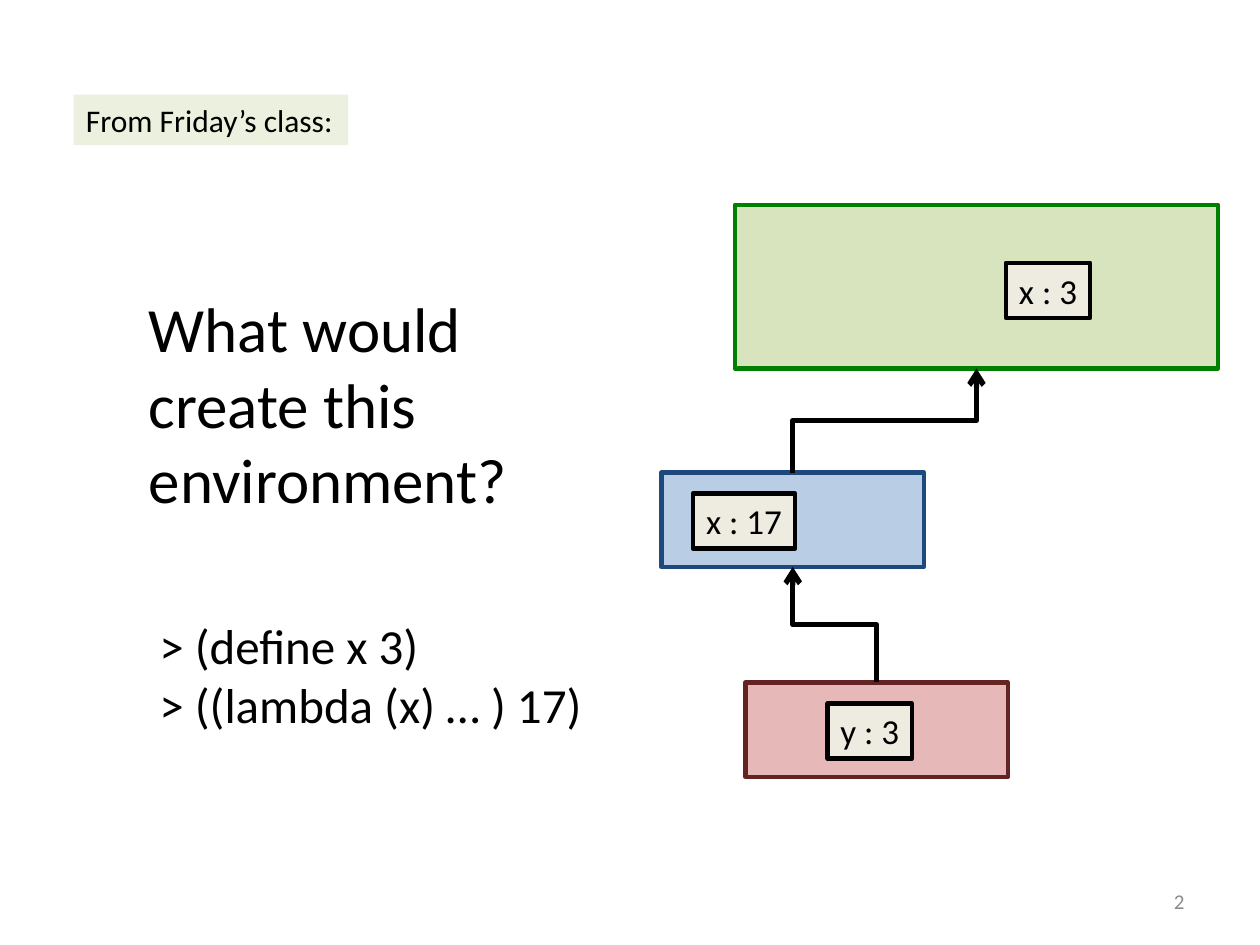
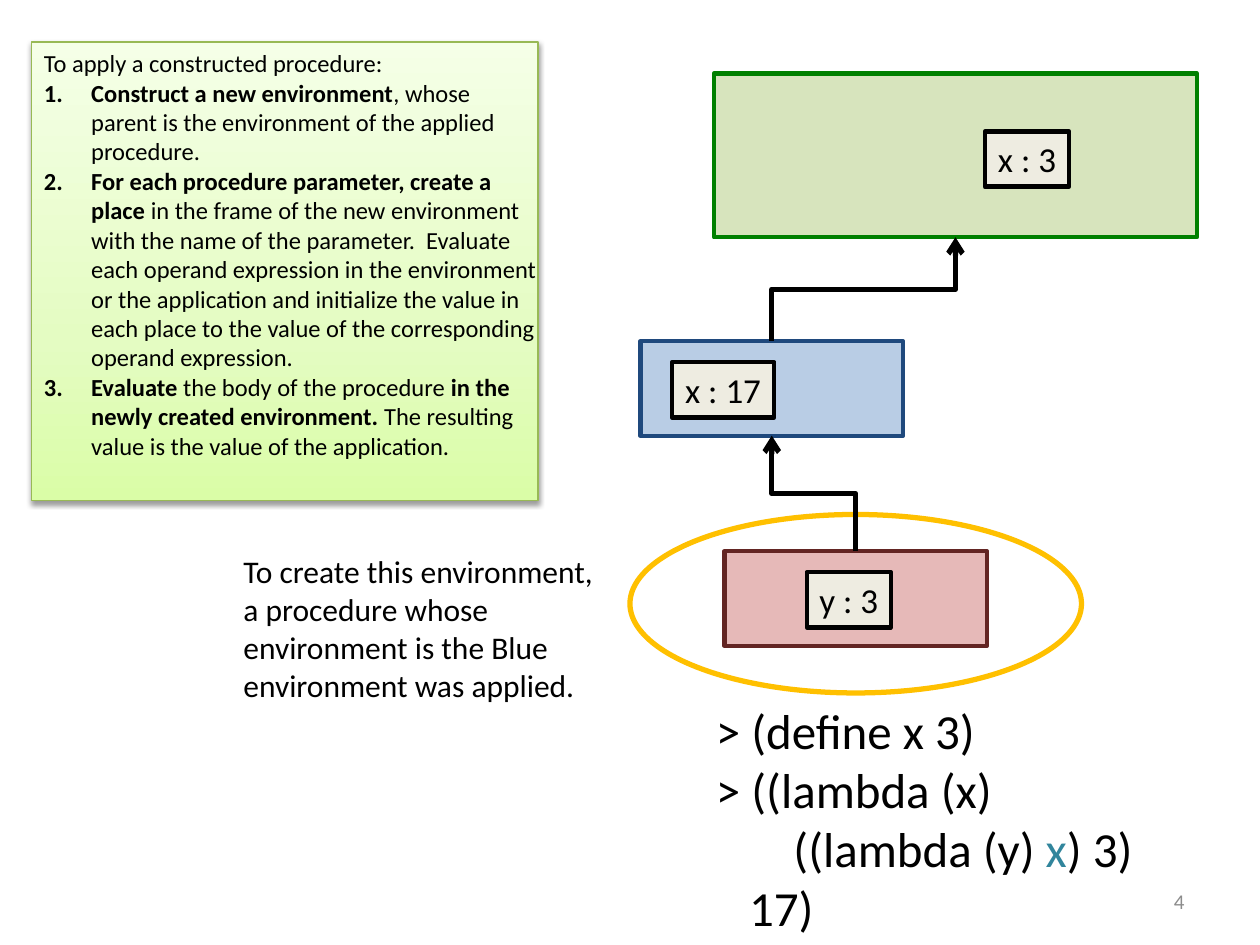
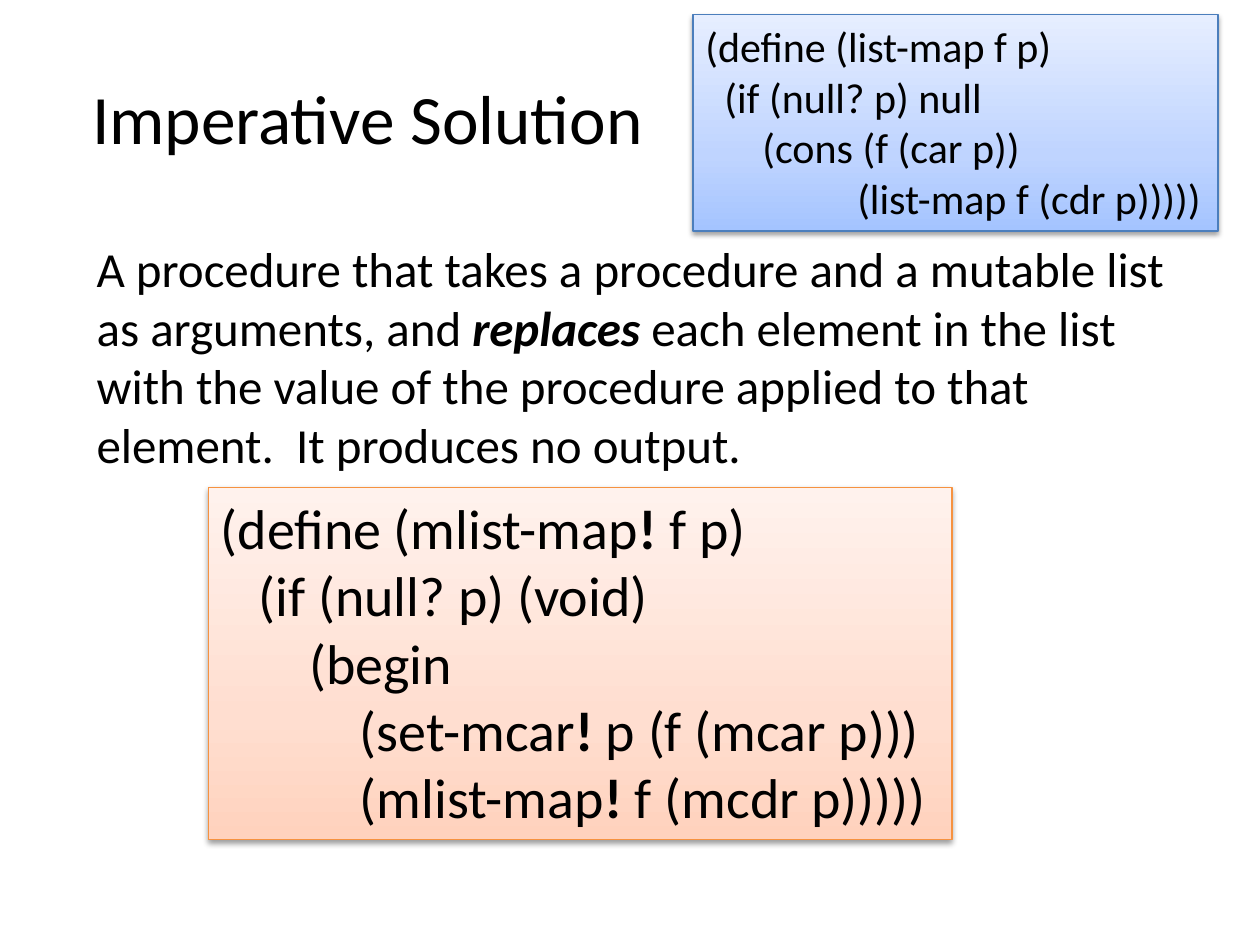
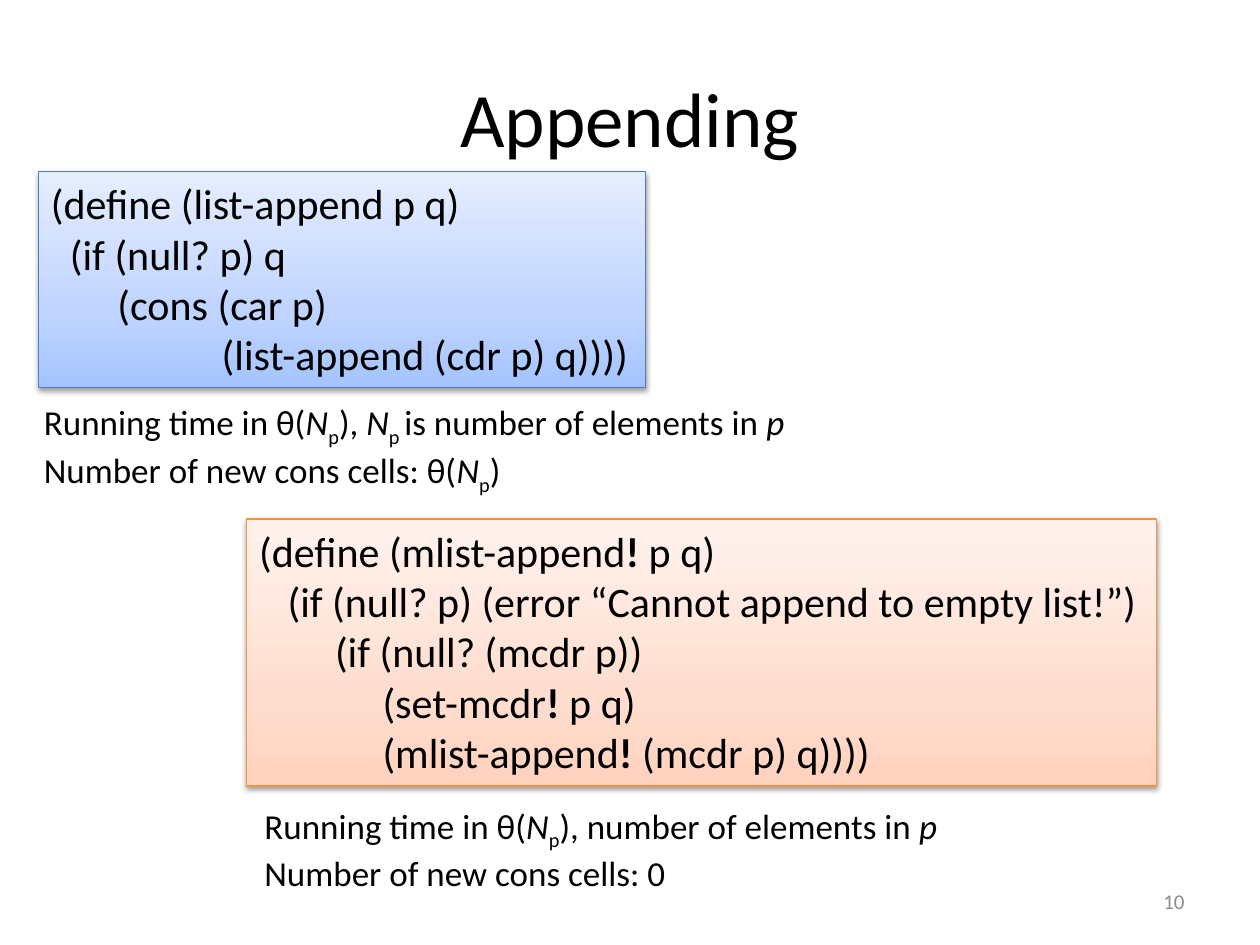
from dataclasses import dataclass

from lxml import etree
from pptx import Presentation
from pptx.dml.color import RGBColor
from pptx.enum import shapes, text
from pptx.oxml import ns
from pptx.util import Pt

FONT = "Calibri"
SPACE_WIDTH = 0.226
LIST_INDENT = 27
BLACK = "000000"
PALE_GREEN = "EBF1DE"
PLACE_FILL = "EEECE1"
GREY = "8C8C8C"
TEAL = "31859C"
AMBER = "FFC000"
GLOBAL_COLOURS = ("D7E4BD", "008000")
BLUE_COLOURS = ("B9CDE5", "1F497D")
RED_COLOURS = ("E6B9B8", "632523")
GREEN_PANEL = (("DAFDA7", "E4FCC2", "F5FFE7"), "98B955")
BLUE_PANEL = (("A4C4FF", "BFD4FF", "E6EEFF"), "4B7EBC")
ORANGE_PANEL = (("FFD2BD", "FFDED0", "FFF2ED"), "F69240")
BOLD = {"bold": True}
ITALIC = {"italic": True}
BANG = ("!", BOLD)
N_SUB_P = (("N", ITALIC), ("p", {"subscript": True}))


@dataclass
class Line:
    runs: tuple
    spaces: int = 0
    numbered: bool = False


def line(*runs, spaces=0, numbered=False):
    return Line(runs, spaces, numbered)


def rgb(value):
    return RGBColor.from_string(value)


def add_xml(parent, tag, **attributes):
    return etree.SubElement(parent, ns.qn(tag), attributes)


def add_run(paragraph, run, size, colour):
    words, style = (run, {}) if isinstance(run, str) else run
    part = paragraph.add_run()
    part.text = words
    part.font.name = FONT
    part.font.size = Pt(size)
    part.font.bold = style.get("bold", False)
    part.font.italic = style.get("italic", False)
    part.font.color.rgb = rgb(style.get("colour", colour))
    if style.get("subscript"):
        part._r.get_or_add_rPr().set("baseline", "-25000")


def write(frame, lines, size, colour=BLACK, align=text.PP_ALIGN.LEFT,
          anchor=text.MSO_ANCHOR.TOP, wrap=True):
    frame.word_wrap = wrap
    frame.vertical_anchor = anchor
    frame.auto_size = text.MSO_AUTO_SIZE.NONE
    for number, content in enumerate(lines):
        paragraph = frame.add_paragraph() if number else frame.paragraphs[0]
        paragraph.alignment = align
        properties = paragraph._p.get_or_add_pPr()
        if content.numbered:
            properties.set("marL", str(Pt(LIST_INDENT)))
            properties.set("indent", str(-Pt(LIST_INDENT)))
            add_xml(properties, "a:buFont", typeface="+mj-lt")
            add_xml(properties, "a:buAutoNum", type="arabicPeriod")
        elif content.spaces:
            margin = Pt(content.spaces * SPACE_WIDTH * size)
            properties.set("marL", str(margin))
            properties.set("indent", "0")
        for run in content.runs:
            add_run(paragraph, run, size, colour)


def add_text(slide, box, lines, size, **style):
    frame = slide.shapes.add_textbox(*map(Pt, box)).text_frame
    frame.margin_right = 0
    write(frame, lines, size, **style)


def add_block(slide, box, fill=None, outline=None, width=2.5,
              kind=shapes.MSO_SHAPE.RECTANGLE):
    block = slide.shapes.add_shape(kind, *map(Pt, box))
    block.shadow.inherit = False
    if fill:
        block.fill.solid()
        block.fill.fore_color.rgb = rgb(fill)
    else:
        block.fill.background()
    if outline:
        block.line.color.rgb = rgb(outline)
        block.line.width = Pt(width)
    else:
        block.line.fill.background()
    return block


def add_panel(slide, box, colours, lines, size):
    gradient, outline = colours
    panel = add_block(slide, box, outline=outline, width=0.75)
    panel.fill.gradient()
    panel.fill.gradient_angle = 90
    properties = panel._element.spPr
    stops = properties.find(".//" + ns.qn("a:gsLst"))
    for stop in list(stops):
        stops.remove(stop)
    for position, colour in zip((0, 35, 100), gradient):
        stop = add_xml(stops, "a:gs", pos=str(position * 1000))
        add_xml(stop, "a:srgbClr", val=colour)
    effects = properties.find(ns.qn("a:effectLst"))
    shadow = add_xml(effects, "a:outerShdw", blurRad=str(Pt(3.1)),
                     dist=str(Pt(1.6)), dir="5400000", rotWithShape="0")
    add_xml(add_xml(shadow, "a:srgbClr", val=BLACK), "a:alpha", val="38000")
    panel.text_frame.margin_right = 0
    write(panel.text_frame, lines, size)


def add_place(slide, box, binding):
    place = add_block(slide, box, PLACE_FILL, BLACK)
    write(place.text_frame, [line(binding)], 20,
          align=text.PP_ALIGN.CENTER, wrap=False)


def add_parent_arrow(slide, child, parent):
    start_x, start_y = child[0] + child[2] / 2, child[1]
    end_x, end_y = parent[0] + parent[2] / 2, parent[1] + parent[3]
    rise, run = start_y - end_y, abs(end_x - start_x)
    left = (start_x + end_x - rise) / 2
    top = (start_y + end_y - run) / 2
    arrow = slide.shapes.add_connector(
        shapes.MSO_CONNECTOR.ELBOW,
        *map(Pt, (left, top, left + rise, top + run)))
    arrow.line.color.rgb = rgb(BLACK)
    arrow.line.width = Pt(3)
    properties = arrow._element.spPr
    properties.xfrm.set("rot", "16200000")
    if end_x < start_x:
        properties.xfrm.set("flipV", "1")
    add_xml(arrow.line._get_or_add_ln(), "a:tailEnd", type="arrow")
    add_xml(properties, "a:effectLst")


def add_environments(slide, x, y):
    global_frame = (x, y, 276, 93.6)
    blue_frame = (x - 42, y + 153, 150, 54)
    red_frame = (x + 6, y + 273, 150, 54)
    for frame, colours in ((red_frame, RED_COLOURS),
                           (global_frame, GLOBAL_COLOURS),
                           (blue_frame, BLUE_COLOURS)):
        add_block(slide, frame, *colours)
    for dx, dy, width, binding in ((154.8, 33.2, 48.2, "x : 3"),
                                   (-24, 165, 58.5, "x : 17"),
                                   (53, 285, 48.2, "y : 3")):
        add_place(slide, (x + dx, y + dy, width, 31.5), binding)
    add_parent_arrow(slide, blue_frame, global_frame)
    add_parent_arrow(slide, red_frame, blue_frame)


def move(placeholder, box):
    placeholder.left, placeholder.top, placeholder.width, placeholder.height = map(Pt, box)


def add_title(slide, words, width, size):
    title = slide.shapes.title
    move(title, (36, 21.6, width, 90))
    write(title.text_frame, [line(words)], size,
          align=text.PP_ALIGN.CENTER, anchor=text.MSO_ANCHOR.MIDDLE)


def add_page_number(slide, number):
    frame = slide.shapes.add_textbox(*map(Pt, (516, 500.5, 168, 28.75))).text_frame
    write(frame, [line(str(number))], 12, colour=GREY,
          align=text.PP_ALIGN.RIGHT, anchor=text.MSO_ANCHOR.MIDDLE)


def build_question(slide):
    add_page_number(slide, 2)
    add_environments(slide, 420, 117)
    add_text(slide, (78, 162, 222, 138),
             [line("What would create this environment?")], 36)
    heading = add_block(slide, (42, 54, 157, 29), PALE_GREEN)
    heading.text_frame.margin_right = 0
    write(heading.text_frame, [line("From Friday’s class:")], 18)
    add_text(slide, (84, 348, 258.5, 75),
             [line("> (define x 3)"), line("> ((lambda (x) … ) 17)")], 28)


def build_application(slide):
    add_block(slide, (360, 294, 258, 102), outline=AMBER, width=3,
              kind=shapes.MSO_SHAPE.OVAL)
    add_page_number(slide, 4)
    add_environments(slide, 408, 42)
    rules = [
        line("To apply a constructed procedure:"),
        line(("Construct a new environment", BOLD),
             ", whose parent is the environment of the applied procedure.",
             numbered=True),
        line(("For each procedure parameter, create a place ", BOLD),
             "in the frame of the new environment with the name of the "
             "parameter.  Evaluate each operand expression in the environment "
             "or the application and initialize the value in each place to "
             "the value of the corresponding operand expression.",
             numbered=True),
        line(("Evaluate", BOLD), " the body of the procedure ",
             ("in the newly created environment. ", BOLD),
             "The resulting value is the value of the application.",
             numbered=True),
    ]
    add_panel(slide, (18, 24, 289.5, 262), GREEN_PANEL, rules, 14)
    add_text(slide, (132, 312, 228, 94.5), [
        line("To create this environment,"),
        line("a procedure whose environment is the Blue environment was applied."),
    ], 18)
    add_text(slide, (402, 397, 255.5, 143), [
        line("> (define x 3)"),
        line("> ((lambda (x)"),
        line("((lambda (y) ", ("x", {"colour": TEAL}), ") 3)", spaces=7),
        line("17)", spaces=3),
    ], 28)


def build_imperative(slide):
    add_title(slide, "Imperative Solution", 348, 39.6)
    task = slide.placeholders[1]
    move(task, (21, 132.5, 669, 132))
    write(task.text_frame, [line(
        "A procedure that takes a procedure and a mutable list as arguments, and ",
        ("replaces", {"bold": True, "italic": True}),
        " each element in the list with the value of the procedure applied "
        "to that element.  It produces no output.")], 28)
    properties = task.text_frame.paragraphs[0]._p.get_or_add_pPr()
    properties.set("marL", str(Pt(LIST_INDENT)))
    properties.set("indent", "0")
    add_xml(properties, "a:buNone")
    add_panel(slide, (119, 278.6, 425, 201), ORANGE_PANEL, [
        line("(define (mlist-map", BANG, " f p)"),
        line("(if (null? p) (void)", spaces=3),
        line("(begin", spaces=7),
        line("(set-mcar", BANG, " p (f (mcar p)))", spaces=11),
        line("(mlist-map", BANG, " f (mcdr p)))))", spaces=11),
    ], 32)
    add_panel(slide, (396, 8.4, 300, 123.6), BLUE_PANEL, [
        line("(define (list-map f p)"),
        line("(if (null? p) null", spaces=2),
        line("(cons (f (car p))", spaces=6),
        line("(list-map f (cdr p)))))", spaces=16),
    ], 24)


def build_appending(slide):
    add_title(slide, "Appending", 648, 44)
    add_page_number(slide, 10)
    add_panel(slide, (22, 98, 347, 123.6), BLUE_PANEL, [
        line("(define (list-append p q)"),
        line("(if (null? p) q", spaces=2),
        line("(cons (car p)", spaces=7),
        line("(list-append (cdr p) q))))", spaces=18),
    ], 24)
    add_panel(slide, (141, 296.5, 520, 152.7), ORANGE_PANEL, [
        line("(define (mlist-append", BANG, " p q)"),
        line("(if (null? p) (error “Cannot append to empty list!”)", spaces=3),
        line("(if (null? (mcdr p))", spaces=8),
        line("(set-mcdr", BANG, " p q)", spaces=13),
        line("(mlist-append", BANG, " (mcdr p) q))))", spaces=13),
    ], 24)
    add_text(slide, (18, 225.4, 443.5, 55.5), [
        line("Running time in θ(", *N_SUB_P, "), ", ("N", ITALIC),
             ("p ", {"subscript": True}), "is number of elements in ", ("p", ITALIC)),
        line("Number of new cons cells: θ(", *N_SUB_P, ")"),
    ], 20)
    add_text(slide, (144, 456, 403, 55.5), [
        line("Running time in θ(", *N_SUB_P, "), number of elements in ", ("p", ITALIC)),
        line("Number of new cons cells: 0"),
    ], 20)


def main():
    deck = Presentation()
    deck.slide_width, deck.slide_height = Pt(720), Pt(540)
    title_and_body, title_only, blank = (deck.slide_layouts[i] for i in (1, 5, 6))
    for build, layout in ((build_question, blank),
                          (build_application, blank),
                          (build_imperative, title_and_body),
                          (build_appending, title_only)):
        build(deck.slides.add_slide(layout))
    deck.save("out.pptx")


if __name__ == "__main__":
    main()
